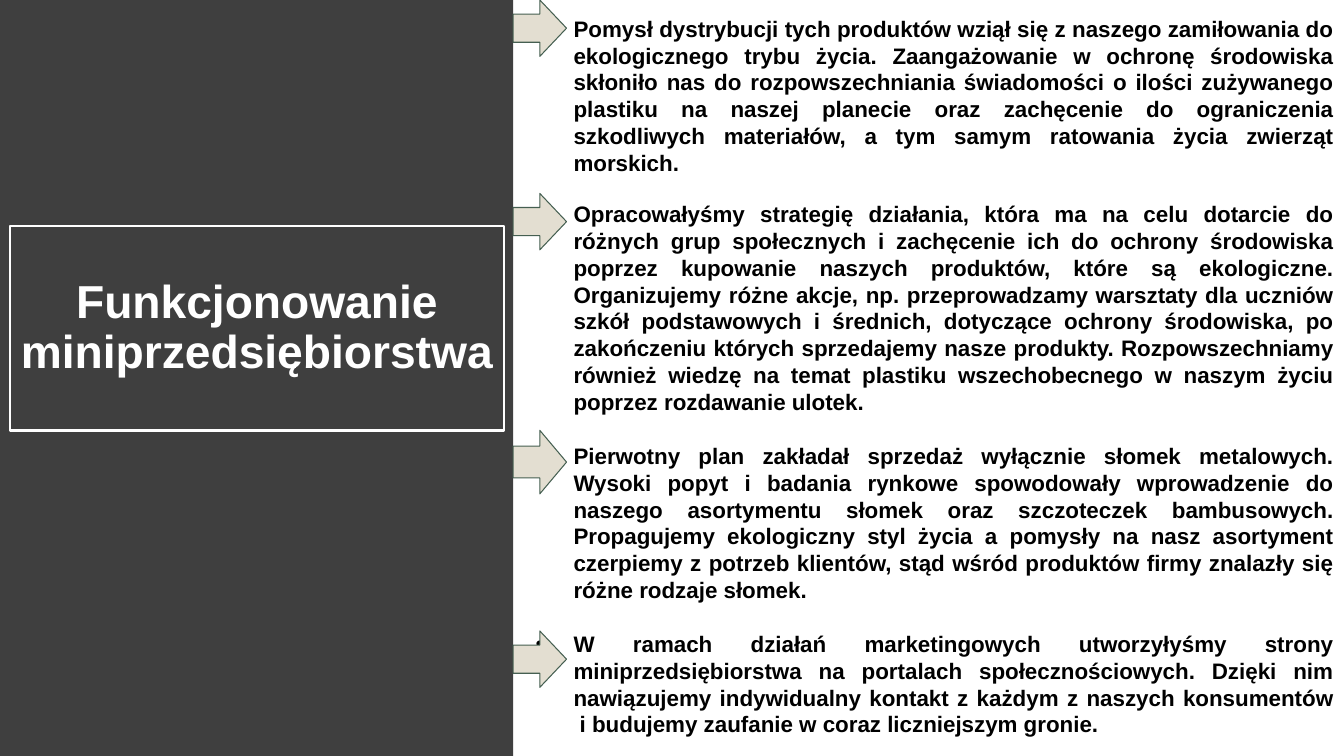
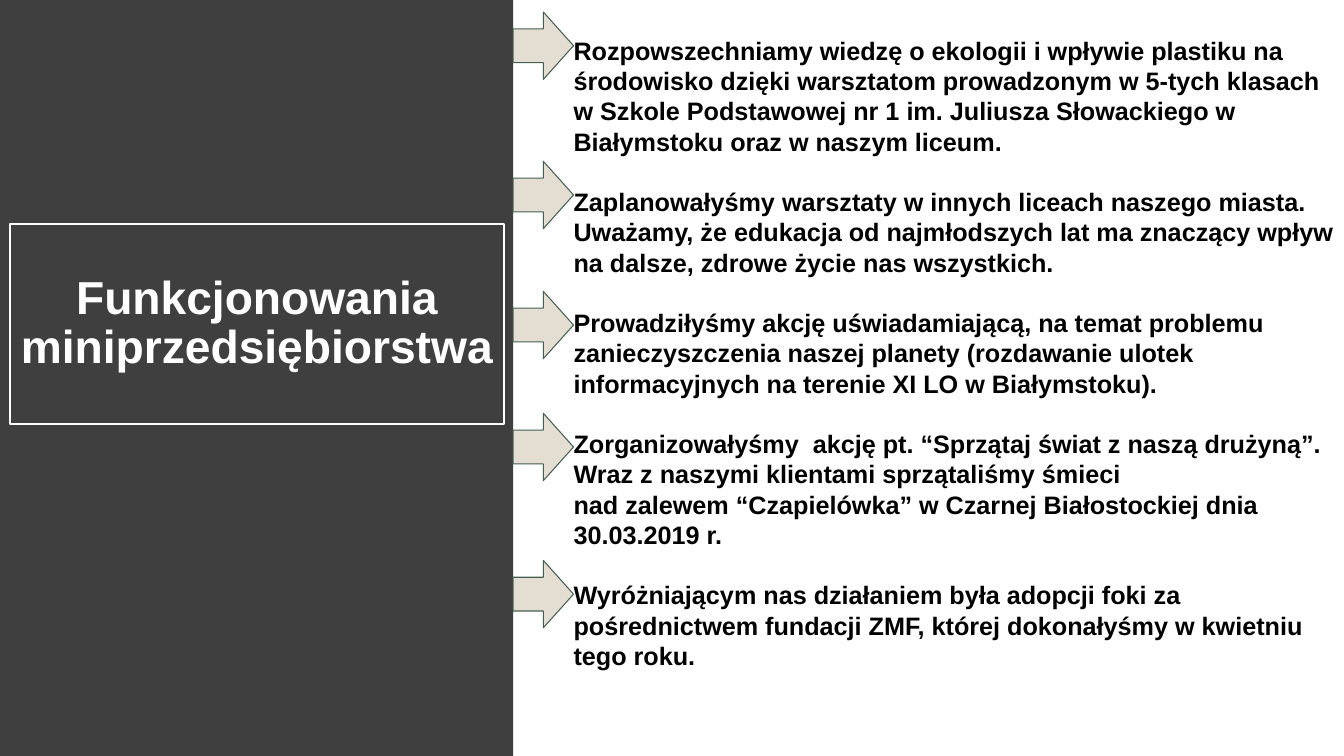
from copy import deepcopy

from lxml import etree
from pptx import Presentation
from pptx.dml.color import RGBColor
from pptx.enum import shapes, text
from pptx.oxml import ns
from pptx.util import Pt

# Shared style
DARK = RGBColor(0x3F, 0x3F, 0x3F)
WHITE = RGBColor(0xFF, 0xFF, 0xFF)
BLACK = RGBColor(0, 0, 0)
SAND = RGBColor(0xE3, 0xDE, 0xD1)
GREEN = RGBColor(0x45, 0x5F, 0x51)
FONT = "Arial"
WIDE, HIGH = 960, 540
SIDE = 366.5  # width of the dark panel
HANG = 36  # left edge of the list text


def put(para, words, size, color, align, space=1.0, before=0):
    """Write formatted words into a paragraph."""
    para.text = words
    para.alignment = align
    para.line_spacing = space
    para.space_before = Pt(before)
    para.space_after = Pt(0)
    for run in para.runs:
        font = run.font
        font.name, font.size, font.bold = FONT, Pt(size), True
        font.color.rgb = color
    # Line breaks take the same format as the words
    for gap in para._p.findall(ns.qn("a:br")):
        gap.insert(0, deepcopy(para.runs[0]._r.rPr))


def mark(para, indent):
    """Give a paragraph a hanging bullet, or none if indent is zero."""
    props = para._p.get_or_add_pPr()
    props.set("marL", str(Pt(HANG)))
    props.set("indent", str(Pt(indent)))
    if not indent:
        etree.SubElement(props, ns.qn("a:buNone"))
        return
    tint = etree.SubElement(props, ns.qn("a:buClr"))
    etree.SubElement(tint, ns.qn("a:srgbClr")).set("val", str(BLACK))
    etree.SubElement(props, ns.qn("a:buChar")).set("char", "•")


class Deck:
    def __init__(self):
        self.prs = Presentation()
        self.prs.slide_width, self.prs.slide_height = Pt(WIDE), Pt(HIGH)
        self.slide = None

    def page(self):
        self.slide = self.prs.slides.add_slide(self.prs.slide_layouts[1])

    def place(self, item, left, top, width, height):
        item.left, item.top = Pt(left), Pt(top)
        item.width, item.height = Pt(width), Pt(height)

    def frame(self, item, top, anchor):
        box = item.text_frame
        box.word_wrap = True
        box.auto_size = text.MSO_AUTO_SIZE.NONE
        box.vertical_anchor = anchor
        box.margin_left = box.margin_right = Pt(7.2)
        box.margin_top, box.margin_bottom = Pt(top), Pt(3.6)
        return box

    def shape(self, kind, left, top, width, height, fill, line=None):
        item = self.slide.shapes.add_shape(
            kind, Pt(left), Pt(top), Pt(width), Pt(height))
        item.shadow.inherit = False
        item.fill.solid()
        item.fill.fore_color.rgb = fill
        if line is None:
            item.line.fill.background()
        else:
            item.line.color.rgb = line
            item.line.width = Pt(0.75)
        return item

    def panel(self):
        item = self.shape(shapes.MSO_SHAPE.RECTANGLE, 0, 0, SIDE, HIGH, DARK)
        # The panel lies behind the title
        self.slide.shapes.title._element.addprevious(item._element)

    def title(self, words, top, height):
        item = self.slide.shapes.title
        self.place(item, 7.2, top, 352.8, height)
        item.fill.background()
        item.line.color.rgb = WHITE
        item.line.width = Pt(1.5)
        box = self.frame(item, 3.6, text.MSO_ANCHOR.MIDDLE)
        put(box.paragraphs[0], words, 33, WHITE, text.PP_ALIGN.CENTER, 0.9)

    def body(self, items, top, inset, size, align):
        """Fill the list; each item is (words, indent, space before)."""
        item = self.slide.placeholders[1]
        self.place(item, SIDE, top, WIDE - SIDE, HIGH - top)
        box = self.frame(item, inset, text.MSO_ANCHOR.TOP)
        for i, (words, indent, before) in enumerate(items):
            para = box.add_paragraph() if i else box.paragraphs[0]
            mark(para, indent)
            put(para, words, size, BLACK, align, before=before)

    def arrow(self, top, width, height):
        self.shape(shapes.MSO_SHAPE.RIGHT_ARROW, SIDE, top, width, height,
                   SAND, GREEN)


IDEAS = [
    ("Pomysł dystrybucji tych produktów wziął się z naszego zamiłowania do "
     "ekologicznego trybu życia. Zaangażowanie w ochronę środowiska skłoniło "
     "nas do rozpowszechniania świadomości o ilości zużywanego plastiku na "
     "naszej planecie oraz zachęcenie do ograniczenia szkodliwych materiałów, "
     "a tym samym ratowania życia zwierząt morskich.", 0, 0),
    ("Opracowałyśmy strategię działania, która ma na celu dotarcie do różnych "
     "grup społecznych i zachęcenie ich do ochrony środowiska poprzez "
     "kupowanie naszych produktów, które są ekologiczne. Organizujemy różne "
     "akcje, np. przeprowadzamy warsztaty dla uczniów szkół podstawowych "
     "i średnich, dotyczące ochrony środowiska, po zakończeniu których "
     "sprzedajemy nasze produkty. Rozpowszechniamy również wiedzę na temat "
     "plastiku wszechobecnego w naszym życiu poprzez rozdawanie ulotek.",
     -26, 17.2),
    ("Pierwotny plan zakładał sprzedaż wyłącznie słomek metalowych. Wysoki "
     "popyt i badania rynkowe spowodowały wprowadzenie do naszego asortymentu "
     "słomek oraz szczoteczek bambusowych. Propagujemy ekologiczny styl życia "
     "a pomysły na nasz asortyment czerpiemy z potrzeb klientów, stąd wśród "
     "produktów firmy znalazły się różne rodzaje słomek.", -26, 19.2),
    ("W ramach działań marketingowych utworzyłyśmy strony "
     "miniprzedsiębiorstwa na portalach społecznościowych. Dzięki nim "
     "nawiązujemy indywidualny kontakt z każdym z naszych konsumentów\v"
     " i budujemy zaufanie w coraz liczniejszym gronie.", -27, 19.2),
]

DEEDS = [
    "Rozpowszechniamy wiedzę o ekologii i wpływie plastiku na środowisko "
    "dzięki warsztatom prowadzonym w 5-tych klasach w Szkole Podstawowej nr 1 "
    "im. Juliusza Słowackiego w Białymstoku oraz w naszym liceum.",
    "Zaplanowałyśmy warsztaty w innych liceach naszego miasta. Uważamy, że "
    "edukacja od najmłodszych lat ma znaczący wpływ na dalsze, zdrowe życie "
    "nas wszystkich.",
    "Prowadziłyśmy akcję uświadamiającą, na temat problemu zanieczyszczenia "
    "naszej planety (rozdawanie ulotek informacyjnych na terenie XI LO "
    "w Białymstoku).",
    "Zorganizowałyśmy  akcję pt. “Sprzątaj świat z naszą drużyną”. Wraz "
    "z naszymi klientami sprzątaliśmy śmieci\vnad zalewem “Czapielówka” "
    "w Czarnej Białostockiej dnia 30.03.2019 r.",
    "Wyróżniającym nas działaniem była adopcji foki za pośrednictwem fundacji "
    "ZMF, której dokonałyśmy w kwietniu tego roku.",
]


def main():
    deck = Deck()

    # How the company works: ideas and plans
    deck.page()
    deck.panel()
    deck.title("Funkcjonowanie miniprzedsiębiorstwa", 161.3, 146.2)
    deck.body(IDEAS, -15.8, 26.4, 16, text.PP_ALIGN.JUSTIFY)
    for top, height in ((0, 40.3), (138.2, 40.3), (307.4, 45.4), (450.7, 40.3)):
        deck.arrow(top, 38.2, height)

    # How the company works: actions taken
    deck.page()
    deck.panel()
    deck.title("Funkcjonowania miniprzedsiębiorstwa", 159.8, 143.3)
    items = [(words, -27, 21.6 if i else 0) for i, words in enumerate(DEEDS)]
    deck.body(items, 0, 25.2, 18, text.PP_ALIGN.LEFT)
    for top in (8.6, 115.2, 208.1, 295.2, 400.3):
        deck.arrow(top, 43.2, 48.2)

    deck.prs.save("out.pptx")


if __name__ == "__main__":
    main()
